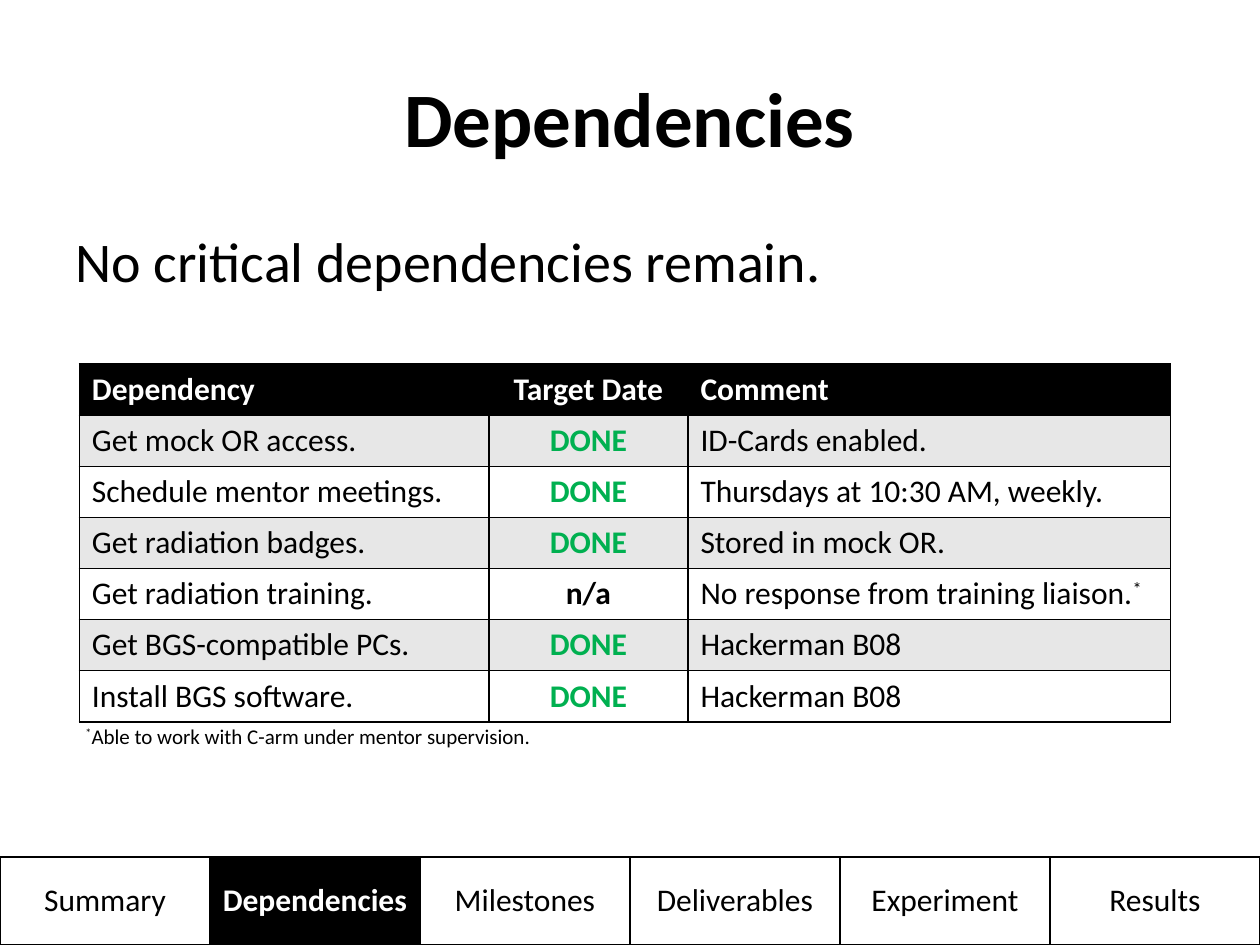
from dataclasses import dataclass

from lxml.etree import SubElement
from pptx import Presentation
from pptx.dml.color import RGBColor
from pptx.enum.text import MSO_ANCHOR, PP_ALIGN
from pptx.oxml.ns import qn
from pptx.slide import Slide
from pptx.table import _Cell
from pptx.text.text import TextFrame
from pptx.util import Inches, Pt

BLACK = RGBColor(0x00, 0x00, 0x00)
WHITE = RGBColor(0xFF, 0xFF, 0xFF)
BAND_GRAY = RGBColor(0xE7, 0xE7, 0xE7)
DONE_GREEN = RGBColor(0x00, 0xB0, 0x50)
FONT = "Calibri"


@dataclass(frozen=True)
class Dependency:
    task: str
    target: str
    comment: str


HEADINGS = Dependency("Dependency", "Target Date", "Comment")
DEPENDENCIES = [
    Dependency("Get mock OR access.", "DONE", "ID-Cards enabled."),
    Dependency("Schedule mentor meetings.", "DONE", "Thursdays at 10:30 AM, weekly."),
    Dependency("Get radiation badges.", "DONE", "Stored in mock OR."),
    Dependency("Get radiation training.", "n/a", "No response from training liaison.*"),
    Dependency("Get BGS-compatible PCs.", "DONE", "Hackerman B08"),
    Dependency("Install BGS software.", "DONE", "Hackerman B08"),
]
SECTIONS = ["Summary", "Dependencies", "Milestones", "Deliverables", "Experiment", "Results"]
CURRENT_SECTION = "Dependencies"


def write_text(frame: TextFrame, text: str, *, size: float = 18, color: RGBColor = BLACK,
               bold: bool = False, align: PP_ALIGN = PP_ALIGN.LEFT) -> None:
    """Write one paragraph, raising each asterisk to a superscript."""
    para = frame.paragraphs[0]
    para.alignment = align
    for part in text.replace("*", "\n*\n").split("\n"):
        if not part:
            continue
        span = para.add_run()
        span.text = part
        span.font.name = FONT
        span.font.size = Pt(size)
        span.font.bold = bold
        span.font.color.rgb = color
        if part == "*":
            span.font._element.set("baseline", "30000")


def add_text_box(page: Slide, text: str, left: float, top: float, width: float, height: float,
                 *, wrap: bool = False, anchor: MSO_ANCHOR = MSO_ANCHOR.TOP, **text_format) -> None:
    box = page.shapes.add_textbox(Inches(left), Inches(top), Inches(width), Inches(height))
    box.text_frame.word_wrap = wrap
    box.text_frame.vertical_anchor = anchor
    write_text(box.text_frame, text, **text_format)


def add_plain_table(page: Slide, left: float, top: float, widths: list[float],
                    row_count: int, row_height: float):
    frame = page.shapes.add_table(row_count, len(widths), Inches(left), Inches(top),
                                  Inches(sum(widths)), Inches(row_count * row_height))
    table = frame.table
    for column, width in zip(table.columns, widths):
        column.width = Inches(width)
    for row in table.rows:
        row.height = Inches(row_height)
    return table


def fill_cell(cell: _Cell, text: str, fill: RGBColor, **text_format) -> None:
    """Give a cell its black borders, fill and text."""
    properties = cell._tc.get_or_add_tcPr()
    for side in ("lnL", "lnR", "lnT", "lnB"):
        line = SubElement(properties, qn(f"a:{side}"), w=str(Pt(1)))
        solid = SubElement(line, qn("a:solidFill"))
        SubElement(solid, qn("a:srgbClr"), val=str(BLACK))
    cell.fill.solid()
    cell.fill.fore_color.rgb = fill
    cell.vertical_anchor = MSO_ANCHOR.MIDDLE
    write_text(cell.text_frame, text, **text_format)


def add_dependency_table(page: Slide) -> None:
    rows = [HEADINGS, *DEPENDENCIES]
    table = add_plain_table(page, 0.63, 2.89, [3.25, 1.58, 3.83], len(rows), 2.84 / len(rows))
    for index, item in enumerate(rows):
        is_heading = index == 0
        fill = BLACK if is_heading else BAND_GRAY if index % 2 else WHITE
        color = WHITE if is_heading else BLACK
        target_color = DONE_GREEN if item.target == "DONE" else color
        task, target, comment = table.rows[index].cells
        fill_cell(task, item.task, fill, color=color, bold=is_heading)
        fill_cell(target, item.target, fill, color=target_color, bold=True, align=PP_ALIGN.CENTER)
        fill_cell(comment, item.comment, fill, color=color, bold=is_heading)


def add_navigation_bar(page: Slide) -> None:
    count = len(SECTIONS)
    table = add_plain_table(page, 0, 6.8, [10 / count] * count, 1, 0.7)
    for cell, section in zip(table.rows[0].cells, SECTIONS):
        current = section == CURRENT_SECTION
        cell.margin_left = cell.margin_right = Inches(0.05)
        cell.margin_top = cell.margin_bottom = Inches(0.05)
        fill_cell(cell, section, BLACK if current else WHITE, color=WHITE if current else BLACK,
                  bold=current, align=PP_ALIGN.CENTER)


def main() -> None:
    deck = Presentation()
    deck.slide_width, deck.slide_height = Inches(10), Inches(7.5)
    page = deck.slides.add_slide(deck.slide_layouts[6])
    add_text_box(page, "Dependencies", 0.5, 0.3, 9, 1.25, wrap=True, anchor=MSO_ANCHOR.MIDDLE,
                 size=44, bold=True, align=PP_ALIGN.CENTER)
    add_navigation_bar(page)
    add_dependency_table(page)
    add_text_box(page, "*Able to work with C-arm under mentor supervision.",
                 0.58, 5.69, 3.78, 0.3, size=12)
    add_text_box(page, "No critical dependencies remain.", 0.5, 1.75, 6.18, 0.64, size=32)
    deck.save("out.pptx")


if __name__ == "__main__":
    main()
